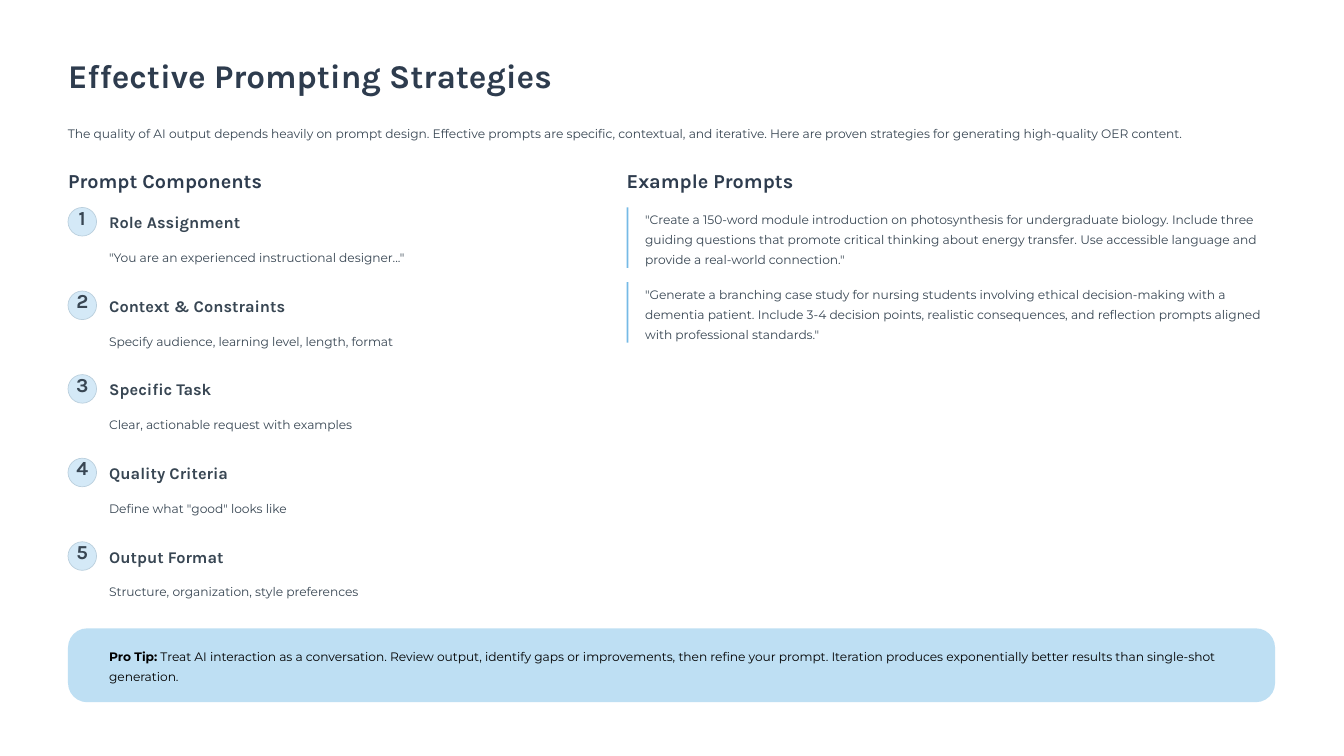
import pptx
import pptx.util
import pptx.dml.color
import pptx.enum.shapes
import pptx.enum.text

Inches, Pt = pptx.util.Inches, pptx.util.Pt
rgb = pptx.dml.color.RGBColor.from_string
SHAPE = pptx.enum.shapes.MSO_SHAPE
ALIGN = pptx.enum.text.PP_ALIGN

HEADING, BODY = "Karla", "Montserrat"
NAVY, SLATE, BLACK = "2E3C4E", "384653", "000000"
LEFT, RIGHT, INDENT = 0.81, 7.46, 1.3

prs = pptx.Presentation()
prs.slide_width, prs.slide_height = Inches(16), Inches(9)
s = prs.slides.add_slide(prs.slide_layouts[5])
s.background.fill.solid()
s.background.fill.fore_color.rgb = rgb("FFFFFF")


def add_text(text, x, y, w, h, sp=None, font=BODY, size=10.5, color=SLATE,
             bold=False, line=17, align=ALIGN.LEFT, wrap=False, lead=""):
    """Write text in a new box, or in sp; lead is a bold opening."""
    sp = sp or s.shapes.add_textbox(0, 0, 0, 0)
    sp.left, sp.top, sp.width, sp.height = [Inches(v) for v in (x, y, w, h)]
    tf = sp.text_frame
    tf.margin_left = tf.margin_top = tf.margin_right = tf.margin_bottom = 0
    tf.word_wrap = wrap
    tf.auto_size = pptx.enum.text.MSO_AUTO_SIZE.NONE
    tf.vertical_anchor = pptx.enum.text.MSO_ANCHOR.TOP
    p = tf.paragraphs[0]
    p.alignment = align
    p.line_spacing = Pt(line)
    p.space_before = Pt(0)
    for words, heavy in ((lead, True), (text, bold)):
        if words:
            r = p.add_run()
            r.text = words
            r.font.name, r.font.size, r.font.bold = font, Pt(size), heavy
            r.font.color.rgb = rgb(color)


def add_panel(kind, x, y, w, h, fill, line=None, radius=None):
    sp = s.shapes.add_shape(kind, Inches(x), Inches(y), Inches(w), Inches(h))
    sp.shadow.inherit = False
    sp.fill.solid()
    sp.fill.fore_color.rgb = rgb(fill)
    if radius is not None:
        sp.adjustments[0] = radius
    if line:
        sp.line.color.rgb = rgb(line)
        sp.line.width = Pt(0.6)
    else:
        sp.line.fill.background()


add_text("Effective Prompting Strategies", LEFT, 0.64, 6.2, 0.5,
         sp=s.shapes.title, font=HEADING, size=28.5, color=NAVY, bold=True, line=35.5)
add_text("The quality of AI output depends heavily on prompt design. Effective prompts are "
         "specific, contextual, and iterative. Here are proven strategies for generating "
         "high-quality OER content.", LEFT, 1.44, 14.37, 0.24)

for x, heading in ((LEFT, "Prompt Components"), (RIGHT, "Example Prompts")):
    add_text(heading, x, 2, 2.39, 0.3, font=HEADING, size=17, color=NAVY, bold=True, line=21)

components = [
    ("Role Assignment", '"You are an experienced instructional designer..."'),
    ("Context & Constraints", "Specify audience, learning level, length, format"),
    ("Specific Task", "Clear, actionable request with examples"),
    ("Quality Criteria", 'Define what "good" looks like'),
    ("Output Format", "Structure, organization, style preferences"),
]
for i, (name, detail) in enumerate(components):
    y = 2.47 + i * 0.995
    add_panel(SHAPE.ROUNDED_RECTANGLE, LEFT, y, 0.34, 0.34, "D4E9F7", line="BACFDD", radius=0.5)
    add_text(str(i + 1), LEFT + 0.05, y + 0.02, 0.24, 0.3, font=HEADING, size=17,
             bold=True, align=ALIGN.CENTER)
    add_text(name, INDENT, y + 0.05, 1.99, 0.25, font=HEADING, size=14, bold=True, line=17.5)
    add_text(detail, INDENT, y + 0.45, 5.77, 0.24)

examples = [
    '"Create a 150-word module introduction on photosynthesis for undergraduate biology. '
    "Include three guiding questions that promote critical thinking about energy transfer. "
    'Use accessible language and provide a real-world connection."',
    '"Generate a branching case study for nursing students involving ethical '
    "decision-making with a dementia patient. Include 3-4 decision points, realistic "
    'consequences, and reflection prompts aligned with professional standards."',
]
for i, example in enumerate(examples):
    y = 2.47 + i * 0.89
    add_text(example, RIGHT + 0.22, y, 7.51, 0.72, wrap=True)
    add_panel(SHAPE.RECTANGLE, RIGHT, y, 0.02, 0.72, "75BAE6")

add_panel(SHAPE.ROUNDED_RECTANGLE, LEFT, 7.48, 14.37, 0.88, "BEDFF3", radius=0.26)
add_text(" Treat AI interaction as a conversation. Review output, identify gaps or "
         "improvements, then refine your prompt. Iteration produces exponentially better "
         "results than single-shot generation.", INDENT, 7.67, 13.73, 0.48,
         color=BLACK, wrap=True, lead="Pro Tip:")

prs.save("out.pptx")
